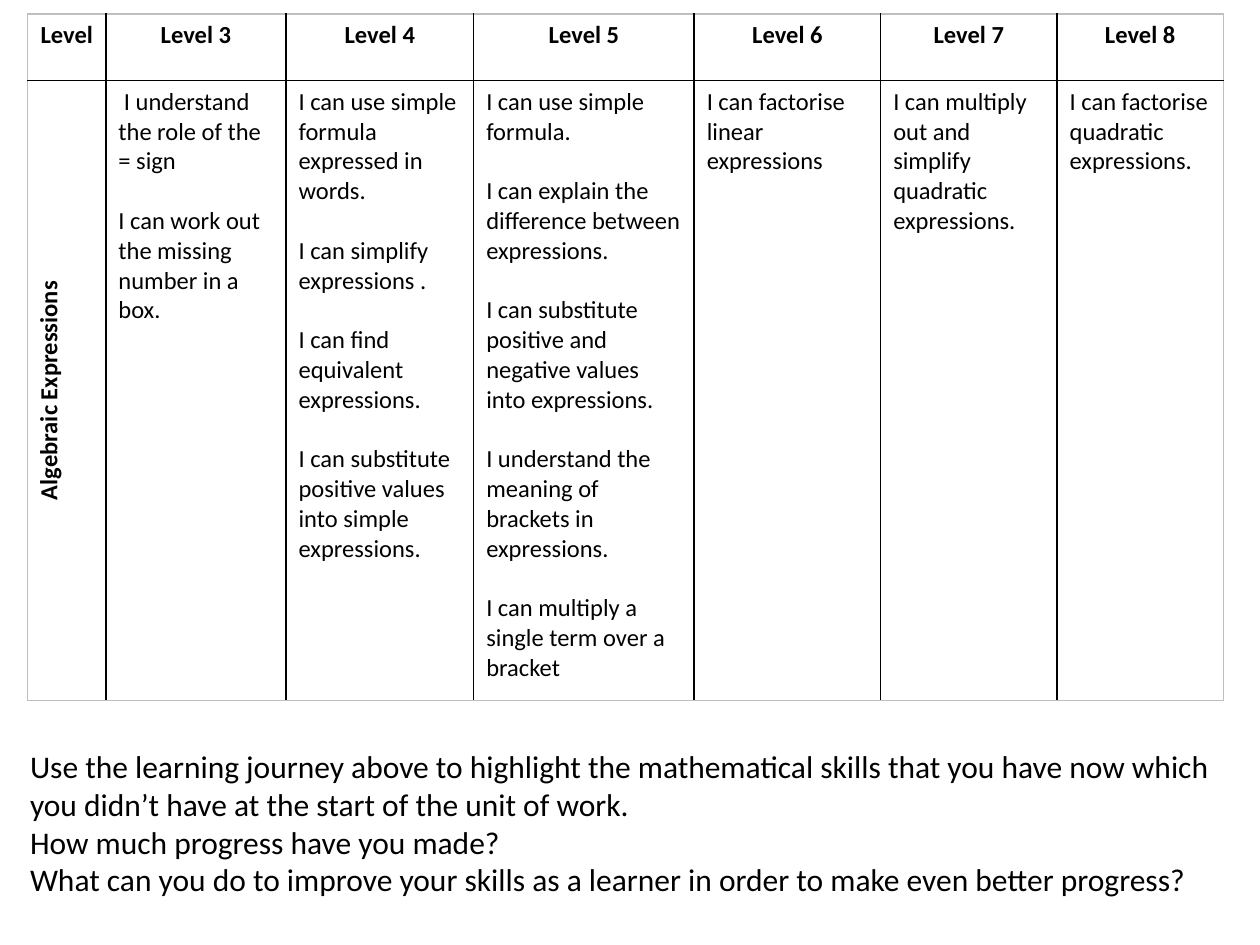
import pptx
import pptx.util
import pptx.dml.color
import pptx.enum.text
import lxml.etree

FONT = "Calibri"
INK = "000000"
FRAME = "BFBFBF"
COLUMN_WIDTHS = [0.62, 1.43, 1.49, 1.75, 1.48, 1.4, 1.32]
ROW_HEIGHTS = [0.53, 4.92]
TOPIC = "Algebraic Expressions"
SKILLS_BY_LEVEL = {
    "Level 3": [
        " I understand the role of the = sign",
        "I can work out the missing number in a box.",
    ],
    "Level 4": [
        "I can use simple formula expressed in words.",
        "I can simplify expressions .",
        "I can find equivalent expressions.",
        "I can substitute positive values into simple expressions.",
    ],
    "Level 5": [
        "I can use simple formula.",
        "I can explain the difference between expressions.",
        "I can substitute positive and negative values into expressions.",
        "I understand the meaning of brackets in expressions.",
        "I can multiply a single term over a bracket",
    ],
    "Level 6": ["I can factorise linear expressions"],
    "Level 7": ["I can multiply out and simplify quadratic expressions."],
    "Level 8": ["I can factorise quadratic expressions."],
}
REFLECTION = [
    "Use the learning journey above to highlight the mathematical skills "
    "that you have now which you didn’t have at the start of the unit of work.",
    "How much progress have you made?",
    "What can you do to improve your skills as a learner in order to make even better progress?",
]


def inches(*lengths):
    return [pptx.util.Inches(length) for length in lengths]


def color(value):
    return pptx.dml.color.RGBColor.from_string(value)


def write(frame, lines, size, bold=False, centered=False, gap=0):
    frame.text = "\n".join(lines)
    for paragraph in frame.paragraphs:
        paragraph.font.name = FONT
        paragraph.font.size = pptx.util.Pt(size)
        paragraph.font.bold = bold
        paragraph.font.color.rgb = color(INK)
        if centered:
            paragraph.alignment = pptx.enum.text.PP_ALIGN.CENTER
    for paragraph in frame.paragraphs[:-1]:
        paragraph.space_after = pptx.util.Pt(gap)


def set_borders(cell, colors):
    properties = cell._tc.get_or_add_tcPr()
    for position, (side, value) in enumerate(colors.items()):
        border = lxml.etree.fromstring(
            f'<a:{side} xmlns:a="http://schemas.openxmlformats.org/drawingml/2006/main" w="12700">'
            f'<a:solidFill><a:srgbClr val="{value}"/></a:solidFill></a:{side}>'
        )
        properties.insert(position, border)


def add_journey(slide):
    rows, columns = len(ROW_HEIGHTS), len(COLUMN_WIDTHS)
    area = inches(0.22, 0.11, sum(COLUMN_WIDTHS), sum(ROW_HEIGHTS))
    journey = slide.shapes.add_table(rows, columns, *area).table
    journey.first_row = journey.horz_banding = False
    for column, width in zip(journey.columns, inches(*COLUMN_WIDTHS)):
        column.width = width
    for row, height in zip(journey.rows, inches(*ROW_HEIGHTS)):
        row.height = height

    headings = ["Level", *SKILLS_BY_LEVEL]
    contents = [[TOPIC], *SKILLS_BY_LEVEL.values()]
    for c, (heading, skills) in enumerate(zip(headings, contents)):
        write(journey.cell(0, c).text_frame, [heading], 14, bold=True, centered=True)
        is_topic = c == 0
        write(journey.cell(1, c).text_frame, skills, 14, bold=is_topic, centered=is_topic, gap=17)
        for r in range(rows):
            cell = journey.cell(r, c)
            cell.fill.background()
            set_borders(cell, {
                "lnL": FRAME if c == 0 else INK,
                "lnR": FRAME if c == columns - 1 else INK,
                "lnT": FRAME if r == 0 else INK,
                "lnB": FRAME if r == rows - 1 else INK,
            })
    journey.cell(1, 0)._tc.get_or_add_tcPr().set("vert", "vert270")


def add_reflection(slide):
    frame = slide.shapes.add_textbox(*inches(0.14, 5.88, 9.76, 1.31)).text_frame
    frame.word_wrap = True
    frame.auto_size = pptx.enum.text.MSO_AUTO_SIZE.SHAPE_TO_FIT_TEXT
    write(frame, REFLECTION, 18)


def main():
    deck = pptx.Presentation()
    deck.slide_width, deck.slide_height = inches(10, 7.5)
    slide = deck.slides.add_slide(deck.slide_layouts[6])
    add_reflection(slide)
    add_journey(slide)
    deck.save("out.pptx")


if __name__ == "__main__":
    main()
